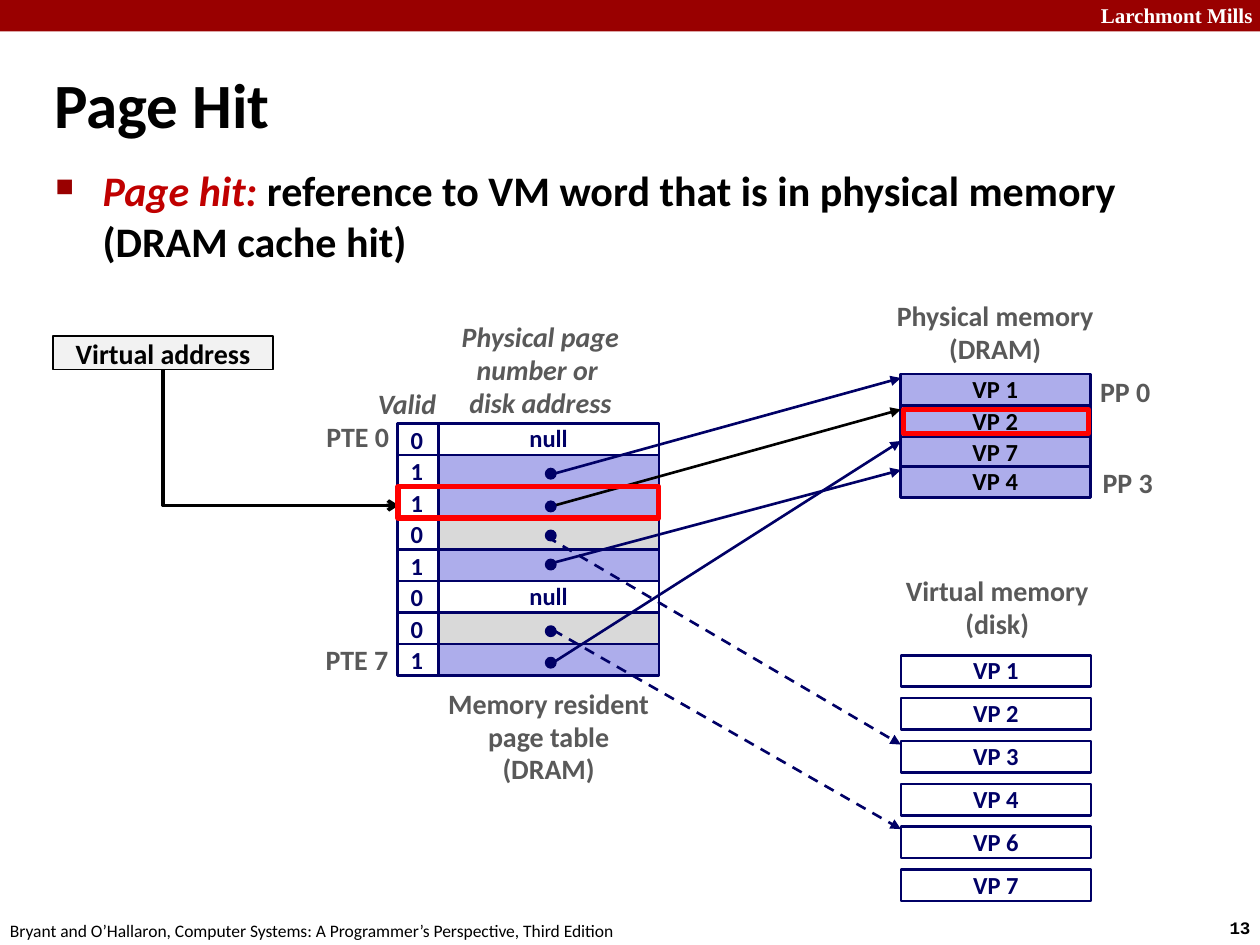
"""Build the Page Hit slide: a page table pointing into physical and virtual memory."""
from typing import NamedTuple, Optional

import pptx
import pptx.dml.color
import pptx.enum.dml
import pptx.enum.shapes
import pptx.enum.text
import pptx.oxml
import pptx.oxml.ns
import pptx.util

Pt = pptx.util.Pt
SHAPE = pptx.enum.shapes.MSO_SHAPE
CONNECTOR = pptx.enum.shapes.MSO_CONNECTOR
ALIGN = pptx.enum.text.PP_ALIGN
ANCHOR = pptx.enum.text.MSO_ANCHOR
qn = pptx.oxml.ns.qn

NAVY, LILAC, GREY, WHITE = "000066", "ADADEB", "D9D9D9", "FFFFFF"
BLACK, RED, LABEL, CRIMSON = "000000", "FF0000", "595959", "990000"
ROW_H = 18
TABLE_TOP, VALID_X, VALID_W, ENTRY_X, ENTRY_W = 242, 227, 23.5, 250.5, 126
MEMORY_X, MEMORY_W = 514.4, 108.6


class Box(NamedTuple):
    x: float
    y: float
    w: float
    h: float


class Entry(NamedTuple):
    valid: str
    fill: str
    dot_y: Optional[float] = None


class Label(NamedTuple):
    text: str
    box: Box
    align: str = "CENTER"
    anchor: str = "MIDDLE"
    italic: bool = False


class Pointer(NamedTuple):
    x1: float
    y1: float
    x2: float
    y2: float
    color: str = NAVY
    dashed: bool = False


ENTRIES = [
    Entry("0", WHITE), Entry("1", LILAC, 267.8), Entry("1", LILAC, 286.5),
    Entry("0", GREY, 303.1), Entry("1", LILAC, 319.7), Entry("0", WHITE),
    Entry("0", GREY, 357.8), Entry("1", LILAC, 375.8),
]
PHYSICAL_PAGES = {"VP 7": 249.8, "VP 4": 266.4, "VP 2": 231.8, "VP 1": 213.8}
VIRTUAL_PAGES = ["VP 1", "VP 2", "VP 3", "VP 4", "VP 6", "VP 7"]
LABELS = [
    Label("Memory resident\npage table\n(DRAM)", Box(247, 389.5, 133, 64), anchor="TOP"),
    Label("Physical memory\n(DRAM)", Box(504.7, 167.8, 128, 45.4), anchor="TOP"),
    Label("Virtual memory\n(disk)", Box(509, 325.4, 121.7, 45.4), anchor="TOP"),
    Label("Valid", Box(208.8, 218.2, 54, 26.6), "LEFT", "TOP", True),
    Label("Physical page\nnumber or \ndisk address", Box(256.3, 180, 105, 64), italic=True),
    Label("PTE 0", Box(179, 236.9, 50.4, 26.6), "RIGHT"),
    Label("PTE 7", Box(178.6, 364.3, 50.4, 26.6), "RIGHT"),
    Label("PP 0", Box(621.4, 211, 43.2, 26.6)),
    Label("PP 3", Box(622.8, 262.8, 43.2, 26.6)),
]
POINTERS = [
    Pointer(316, 360, 514.8, 473.8, dashed=True),
    Pointer(316, 378.7, 514.8, 252),
    Pointer(317.5, 288.7, 514.8, 234, BLACK),
    Pointer(314, 271.4, 514.8, 216),
    Pointer(312.5, 306.7, 514.8, 425.5, dashed=True),
    Pointer(315.4, 321.8, 514.8, 268.6),
]


def rgb(color: str) -> pptx.dml.color.RGBColor:
    return pptx.dml.color.RGBColor.from_string(color)


def add_child(parent, tag: str, **attrs: str):
    child = pptx.oxml.parse_xml(
        f'<a:{tag} xmlns:a="http://schemas.openxmlformats.org/drawingml/2006/main"/>')
    for name, value in attrs.items():
        child.set(name, value)
    parent.append(child)
    return child


def add_run(p, text: str, *, size=16, color=BLACK, bold=True, italic=False, font="Calibri"):
    r = p.add_run()
    r.text = text
    r.font.name, r.font.size = font, Pt(size)
    r.font.bold, r.font.italic = bold, italic
    r.font.color.rgb = rgb(color)


def write(sp, text: str, *, align="LEFT", anchor="TOP", wrap=False, spacing=None, **font):
    tf = sp.text_frame
    tf.word_wrap = wrap
    tf.vertical_anchor = ANCHOR[anchor]
    for i, line in enumerate(text.split("\n")):
        p = tf.paragraphs[0] if i == 0 else tf.add_paragraph()
        p.alignment = ALIGN[align]
        if spacing:
            p.line_spacing = spacing
        add_run(p, line, **font)


def add_text(s, box: Box, text: str, **style):
    sp = s.shapes.add_textbox(*map(Pt, box))
    write(sp, text, **style)
    return sp


def add_box(s, box: Box, *, fill=None, line=NAVY, width=1.5, kind=SHAPE.RECTANGLE):
    sp = s.shapes.add_shape(kind, *map(Pt, box))
    sp.shadow.inherit = False
    if fill:
        sp.fill.solid()
        sp.fill.fore_color.rgb = rgb(fill)
    else:
        sp.fill.background()
    if line:
        sp.line.color.rgb = rgb(line)
        sp.line.width = Pt(width)
    else:
        sp.line.fill.background()
    return sp


def add_page(s, box: Box, text: str, fill: str, color: str):
    sp = add_box(s, box, fill=fill)
    write(sp, text, align="CENTER", anchor="MIDDLE", spacing=0.98, size=14, color=color)


def add_arrow(s, ends: tuple, *, color=NAVY, width=1.5, dashed=False,
              head="triangle", kind=CONNECTOR.STRAIGHT):
    c = s.shapes.add_connector(kind, *map(Pt, ends))
    c.line.color.rgb = rgb(color)
    c.line.width = Pt(width)
    if dashed:
        c.line.dash_style = pptx.enum.dml.MSO_LINE.DASH
    add_child(c.line._get_or_add_ln(), "tailEnd", type=head)
    add_child(c._element.spPr, "effectLst")
    return c


def add_frame(s):
    add_box(s, Box(0, 0, 720, 18), fill=CRIMSON, line=None)
    add_text(s, Box(622, -2, 103, 21.6), "Larchmont Mills", size=12, color=WHITE,
             font="Times New Roman", wrap=True)
    add_text(s, Box(695.5, 520.6, 32.4, 19.4), "13", size=10, font="Courier New")
    add_text(s, Box(-1.4, 522, 365.8, 19.4), "Bryant and O’Hallaron, Computer Systems: "
             "A Programmer’s Perspective, Third Edition", size=10, bold=False)
    add_text(s, Box(23.8, 28, 652.3, 62), "Page Hit", size=36, anchor="MIDDLE", wrap=True)
    sp = add_text(s, Box(24.5, 90.7, 654.5, 47.5), "Page hit: ", size=24, color="C00000",
                  italic=True, wrap=True)
    p = sp.text_frame.paragraphs[0]
    add_run(p, "reference to VM word that is in physical memory (DRAM cache hit)", size=24)
    p.space_before = Pt(4.8)
    pPr = p._p.get_or_add_pPr()
    pPr.set("marL", str(Pt(27)))
    pPr.set("indent", str(-Pt(27)))
    add_child(add_child(pPr, "buClr"), "srgbClr", val=CRIMSON)
    add_child(pPr, "buSzPct", val="60000")
    add_child(pPr, "buChar", char="■")


def add_page_table(s):
    for i, entry in enumerate(ENTRIES):
        y = TABLE_TOP + i * ROW_H
        cell = Box(ENTRY_X, y, ENTRY_W, ROW_H)
        if entry.dot_y is None:
            add_page(s, cell, "null", entry.fill, NAVY)
        else:
            add_box(s, cell, fill=entry.fill)
        add_box(s, Box(VALID_X, y, VALID_W, ROW_H))
        add_text(s, Box(227.5, y - 2, 22.3, 23.8), entry.valid, spacing=0.98,
                 size=14, color=NAVY)


def add_pointers(s):
    for pointer in POINTERS:
        add_arrow(s, pointer[:4], color=pointer.color, dashed=pointer.dashed)
    for entry in ENTRIES:
        if entry.dot_y is not None:
            add_box(s, Box(311.8, entry.dot_y, 5.8, 5.8), fill=NAVY, width=1, kind=SHAPE.OVAL)


def add_lookup(s):
    sp = add_box(s, Box(30.2, 192.2, 126, 19), fill="F2F2F2", line=BLACK, width=1)
    write(sp, "Virtual address", align="CENTER", anchor="MIDDLE", wrap=True)
    c = add_arrow(s, (199.5, 182.6, 121.7, 317.2), color=BLACK, width=2,
                  head="arrow", kind=CONNECTOR.ELBOW)
    c._element.spPr.find(qn("a:prstGeom")).set("prst", "bentConnector2")
    c._element.spPr.find(qn("a:xfrm")).set("rot", "16200000")
    add_box(s, Box(516.2, 234, 105.8, 13.7), line=RED, width=3)
    add_box(s, Box(227.5, 278, 149, ROW_H), line=RED, width=3)


def main():
    prs = pptx.Presentation()
    prs.slide_width, prs.slide_height = Pt(720), Pt(540)
    s = prs.slides.add_slide(prs.slide_layouts[6])
    add_frame(s)
    add_page_table(s)
    for name, y in PHYSICAL_PAGES.items():
        add_page(s, Box(MEMORY_X, y, MEMORY_W, ROW_H), name, LILAC, BLACK)
    for i, name in enumerate(VIRTUAL_PAGES):
        add_page(s, Box(MEMORY_X + 0.4, 374.4 + i * 24.5, MEMORY_W, ROW_H), name, WHITE, NAVY)
    for label in LABELS:
        add_text(s, label.box, label.text, align=label.align, anchor=label.anchor,
                 italic=label.italic, color=LABEL, spacing=0.98)
    add_pointers(s)
    add_lookup(s)
    prs.save("out.pptx")


if __name__ == "__main__":
    main()
